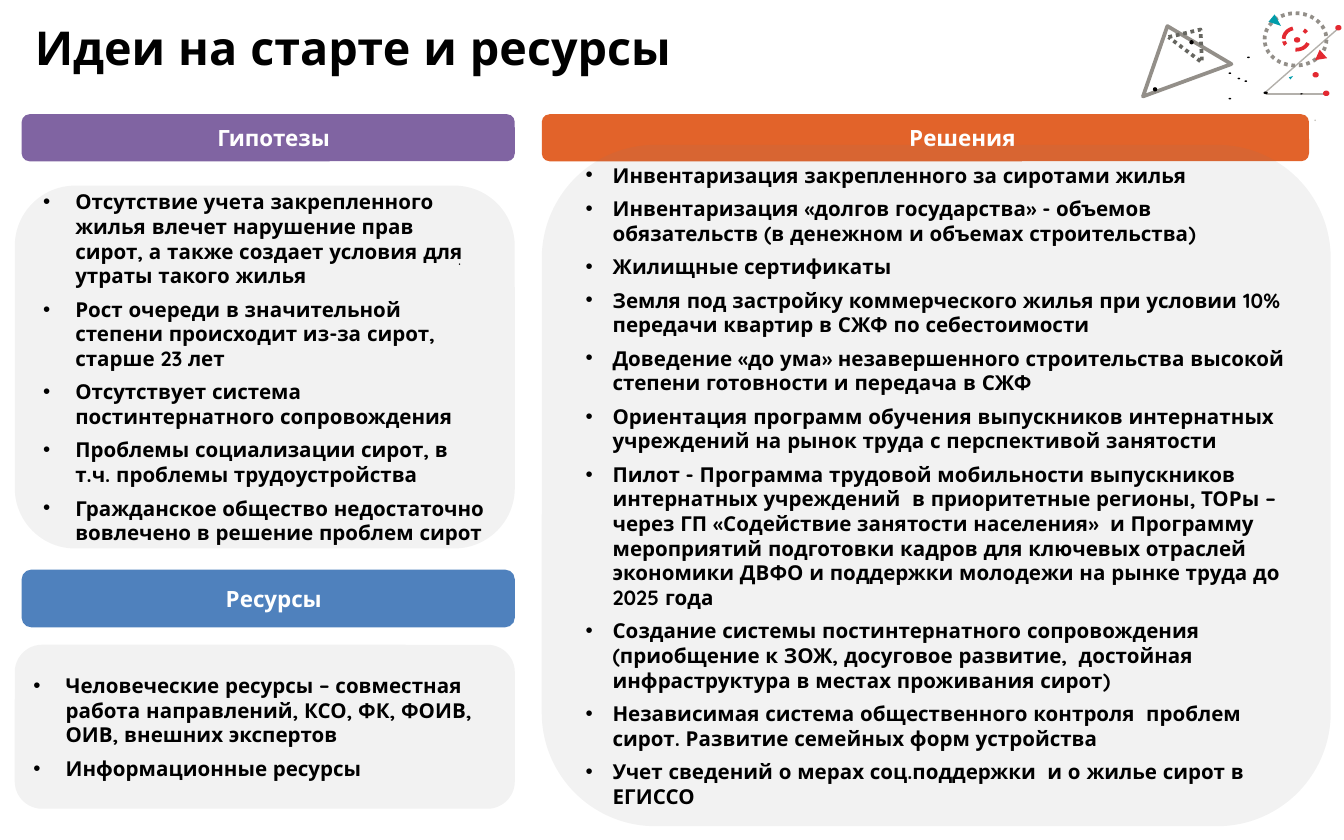
from lxml import etree
from pptx import Presentation
from pptx.dml.color import RGBColor
from pptx.enum.dml import MSO_LINE
from pptx.enum.shapes import MSO_CONNECTOR, MSO_SHAPE
from pptx.enum.text import MSO_ANCHOR, PP_ALIGN
from pptx.oxml.ns import qn
from pptx.util import Cm, Pt

ROUNDED = MSO_SHAPE.ROUNDED_RECTANGLE
OVAL = MSO_SHAPE.OVAL
TRIANGLE = MSO_SHAPE.ISOSCELES_TRIANGLE
DOTTED = MSO_LINE.ROUND_DOT
DASH_DOT = MSO_LINE.DASH_DOT
STRAIGHT = MSO_CONNECTOR.STRAIGHT
MIDDLE = MSO_ANCHOR.MIDDLE
CENTER = PP_ALIGN.CENTER

FONT = "Quicksand"
COLORS = {
    "text": "000000", "white": "FFFFFF", "panel": "808080",
    "purple": "8064A2", "blue": "4F81BD", "orange": "E2632A",
    "ink": "020000", "teal": "009CAA", "red": "E32931",
    "gray": "938F89", "dark gray": "666660", "pale": "B3B0AB", "speck": "CBC9C3",
}

LEFT_BAR_X, LEFT_BAR_W = 0.41, 9.32
LEFT_PANEL_X, LEFT_PANEL_W = 0.28, 9.45
RIGHT_X = 10.24
TOP_BAR_Y, TOP_BAR_H = 2.16, 0.89

HYPOTHESES = [
    "Отсутствие учета закрепленного жилья влечет нарушение прав сирот, "
    "а также создает условия для утраты такого жилья",
    "Рост очереди в значительной степени происходит из-за сирот, старше 23 лет",
    "Отсутствует система постинтернатного сопровождения",
    "Проблемы социализации сирот, в т.ч. проблемы трудоустройства",
    "Гражданское общество недостаточно вовлечено в решение проблем сирот",
]
RESOURCES = [
    "Человеческие ресурсы – совместная работа направлений, КСО, ФК, ФОИВ, ОИВ, "
    "внешних экспертов",
    "Информационные ресурсы",
]
SOLUTIONS = [
    "Инвентаризация закрепленного за сиротами жилья",
    "Инвентаризация «долгов государства» - объемов обязательств "
    "(в денежном и объемах строительства)",
    "Жилищные сертификаты",
    "Земля под застройку коммерческого жилья при условии 10% передачи квартир "
    "в СЖФ по себестоимости",
    "Доведение «до ума» незавершенного строительства высокой степени готовности "
    "и передача в СЖФ",
    "Ориентация программ обучения выпускников интернатных учреждений "
    "на рынок труда с перспективой занятости",
    "Пилот - Программа трудовой мобильности выпускников интернатных учреждений  "
    "в приоритетные регионы, ТОРы – через ГП «Содействие занятости населения»  "
    "и Программу мероприятий подготовки кадров для ключевых отраслей экономики "
    "ДВФО и поддержки молодежи на рынке труда до 2025 года",
    "Создание системы постинтернатного сопровождения (приобщение к ЗОЖ, "
    "досуговое развитие,  достойная инфраструктура в местах проживания сирот)",
    "Независимая система общественного контроля  проблем сирот. "
    "Развитие семейных форм устройства",
    "Учет сведений о мерах соц.поддержки  и о жилье сирот в ЕГИССО",
]

# Left, top, width, height in cm, then the colour
DOTS = [
    (23.39, 1.47, 0.05, 0.03, "ink"), (23.22, 1.37, 0.05, 0.03, "ink"),
    (23.22, 1.85, 0.05, 0.03, "ink"), (23.57, 1.07, 0.05, 0.03, "ink"),
    (23.52, 1.52, 0.05, 0.03, "ink"), (23.88, 1.73, 0.08, 0.05, "ink"),
    (21.79, 1.65, 0.08, 0.08, "ink"), (22.48, 0.76, 0.08, 0.08, "ink"),
    (24.84, 2.26, 0.03, 0.03, "speck"),
]
RINGED_DOTS = [(25.27, 0.51), (24.84, 1.4), (25.04, 1.75), (24.49, 0.74)]
# Left, top, width, height in cm, rotation, then the colour
SOLID_TRIANGLES = [
    (24.38, 1.42, 0.05, 0.08, 55.8, "teal"), (24.05, 2.18, 0.08, 0.05, 344.2, "teal"),
    (24.03, 0.3, 0.18, 0.23, 129.7, "teal"), (24.84, 0.94, 0.23, 0.18, 351, "red"),
    (24.59, 1.75, 0.03, 0.05, 90, "ink"),
]
# Preset, left, top, width, height in cm, rotation, colour, dash
OUTLINES = [
    (TRIANGLE, 21.36, 0.46, 1.78, 1.09, 339.9, "gray", None),
    (TRIANGLE, 22.15, 0.51, 0.79, 0.48, 37.2, "dark gray", DOTTED),
    (OVAL, 23.9, 0.25, 1.17, 0.99, 0, "gray", DOTTED),
    (OVAL, 24.26, 0.53, 0.48, 0.41, 0, "red", DASH_DOT),
]


def rgb(name):
    return RGBColor.from_string(COLORS[name])


def add_figure(slide, preset, box, fill=None, line=None, dash=None, rotation=0):
    figure = slide.shapes.add_shape(preset, *map(Cm, box))
    figure.shadow.inherit = False
    figure.rotation = rotation
    if fill:
        figure.fill.solid()
        figure.fill.fore_color.rgb = rgb(fill)
    else:
        figure.fill.background()
    if line:
        figure.line.color.rgb = rgb(line)
        figure.line.width = Pt(2)
        if dash:
            figure.line.dash_style = dash
    else:
        figure.line.fill.background()
    return figure


def add_ray(slide, start, end, width):
    ray = slide.shapes.add_connector(STRAIGHT, *map(Cm, start + end))
    ray.line.color.rgb = rgb("pale")
    ray.line.width = Pt(width)
    etree.SubElement(ray._element.spPr, qn("a:effectLst"))


def set_frame(frame, insets, anchor=None):
    frame.word_wrap = True
    frame.margin_left, frame.margin_top, frame.margin_right, frame.margin_bottom = map(
        Cm, insets)
    if anchor is not None:
        frame.vertical_anchor = anchor


def add_run(paragraph, text, size, color="text", bold=True):
    run = paragraph.add_run()
    run.text = text
    run.font.name = FONT
    run.font.size = Pt(size)
    run.font.bold = bold
    run.font.color.rgb = rgb(color)


def add_label(slide, box, text, size, insets, bold=True):
    frame = slide.shapes.add_textbox(*map(Cm, box)).text_frame
    set_frame(frame, insets)
    add_run(frame.paragraphs[0], text, size, bold=bold)
    return frame


def add_bar(slide, box, heading, color, left_inset=0.41, right_inset=0.2):
    frame = add_figure(slide, ROUNDED, box, color).text_frame
    set_frame(frame, (left_inset, 0, right_inset, 0), MIDDLE)
    frame.paragraphs[0].alignment = CENTER
    add_run(frame.paragraphs[0], heading, 12, "white")


def add_panel(slide, box, items, indent):
    """Translucent rounded panel with a bulleted list."""
    panel = add_figure(slide, ROUNDED, box, "panel")
    tint = panel._element.spPr.find(qn("a:solidFill"))[0]
    etree.SubElement(tint, qn("a:alpha"), val="10000")
    frame = panel.text_frame
    set_frame(frame, (0.2, 0.1, 0.2, 0.1), MIDDLE)
    for number, item in enumerate(items):
        paragraph = frame.add_paragraph() if number else frame.paragraphs[0]
        props = paragraph._p.get_or_add_pPr()
        props.set("marL", str(Cm(indent)))
        props.set("indent", str(-Cm(indent)))
        etree.SubElement(props, qn("a:buFont"), typeface="Arial")
        etree.SubElement(props, qn("a:buChar"), char="•")
        paragraph.alignment = PP_ALIGN.LEFT
        if number:
            paragraph.space_before = Pt(4.7)
        add_run(paragraph, item, 11)


def add_corner_ornament(slide):
    add_ray(slide, (23.93, 1.73), (25.3, 0.53), 0.75)
    add_ray(slide, (25.04, 1.78), (23.93, 1.78), 1)
    for preset, *box, rotation, color, dash in OUTLINES:
        add_figure(slide, preset, box, line=color, dash=dash, rotation=rotation)
    for *box, rotation, color in SOLID_TRIANGLES:
        add_figure(slide, TRIANGLE, box, color, rotation=rotation)
    for *box, color in DOTS:
        add_figure(slide, OVAL, box, color)
    for left, top in RINGED_DOTS:
        add_figure(slide, OVAL, (left, top, 0.05, 0.03), "white", "red")


def main():
    deck = Presentation()
    deck.slide_width, deck.slide_height = Cm(25.4), Cm(15.88)
    slide = deck.slides.add_slide(deck.slide_layouts[6])

    add_corner_ornament(slide)
    add_label(slide, (8.66, 4.7, 8.38, 0.38), ".", 9, (0, 0, 0, 0), bold=False)
    title = add_label(slide, (0.46, 0.25, 14.05, 1.65), "Идеи на старте и ресурсы",
                      25, (0.2, 0.1, 0.2, 0.1))
    title.vertical_anchor = MSO_ANCHOR.TOP

    add_bar(slide, (LEFT_BAR_X, TOP_BAR_Y, LEFT_BAR_W, TOP_BAR_H), "Гипотезы", "purple")
    add_panel(slide, (LEFT_PANEL_X, 3.51, LEFT_PANEL_W, 6.86), HYPOTHESES, 0.61)
    add_bar(slide, (LEFT_BAR_X, 10.77, LEFT_BAR_W, 1.09), "Ресурсы", "blue")
    add_panel(slide, (LEFT_PANEL_X, 12.19, LEFT_PANEL_W, 3.1), RESOURCES, 0.61)
    add_bar(slide, (RIGHT_X, TOP_BAR_Y, 14.5, TOP_BAR_H), "Решения", "orange", 1.4, 0)
    add_panel(slide, (RIGHT_X, 2.74, 14.91, 12.88), SOLUTIONS, 0.51)

    deck.save("out.pptx")


if __name__ == "__main__":
    main()
